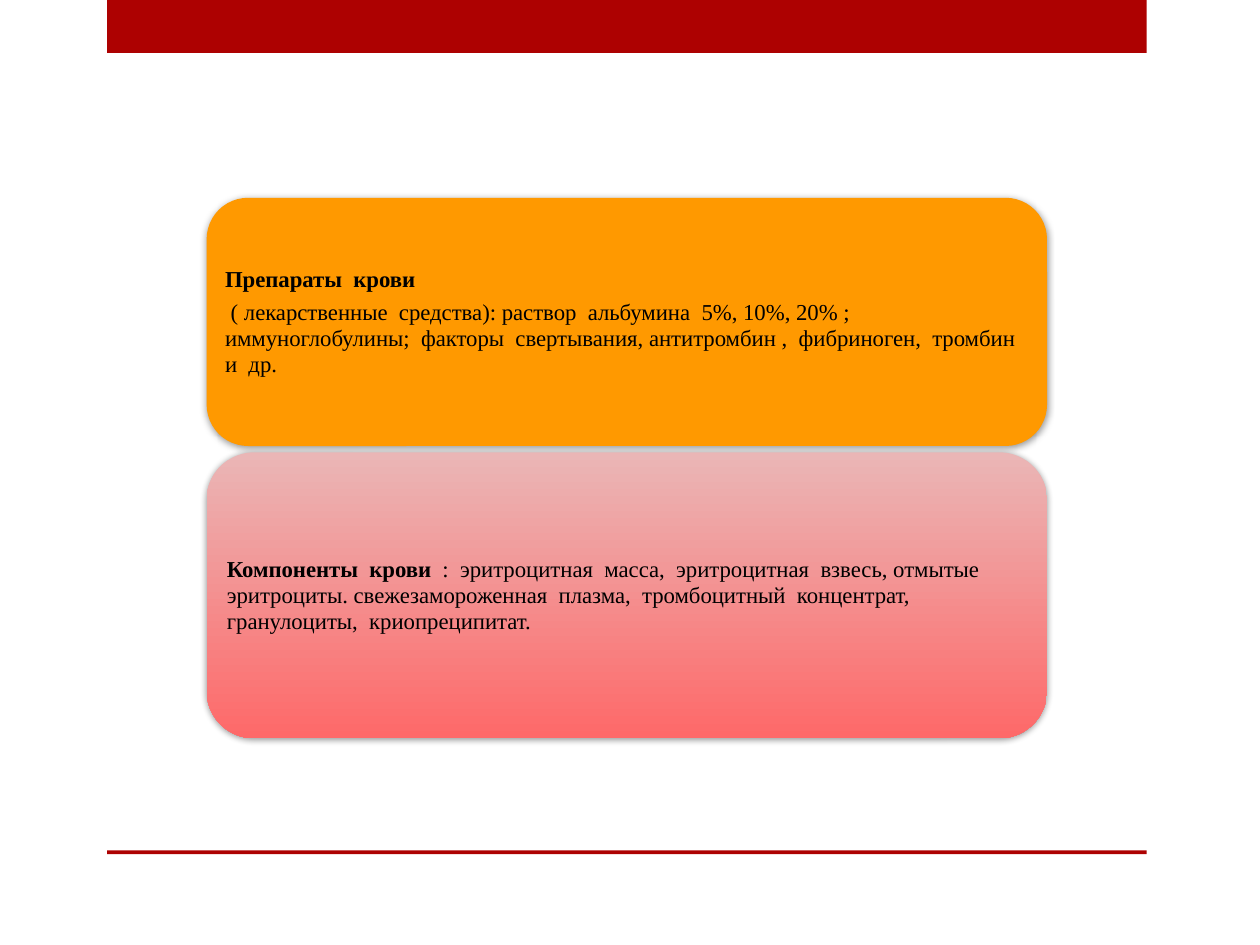
from dataclasses import dataclass

from lxml import etree
from pptx import Presentation
from pptx.dml.color import RGBColor
from pptx.enum.shapes import MSO_SHAPE
from pptx.enum.text import MSO_ANCHOR, PP_ALIGN
from pptx.oxml.ns import qn
from pptx.util import Inches, Pt

RECTANGLE = MSO_SHAPE.RECTANGLE
ROUNDED = MSO_SHAPE.ROUNDED_RECTANGLE
MIDDLE = MSO_ANCHOR.MIDDLE
LEFT = PP_ALIGN.LEFT
BLANK_LAYOUT = 6


@dataclass(frozen=True)
class Theme:
    bar: str = "AD0101"
    orange: str = "FF9900"
    pink: tuple = ("EAB6B6", "FE6969")
    ink: str = "000000"
    font: str = "Times New Roman"
    size: float = 13


THEME = Theme()

# Slide size and the columns shared by the parts, in inches
WIDTH, HEIGHT = 10, 7.5
BAR_LEFT, BAR_WIDTH = 0.85, 8.25
CARD_LEFT, CARD_WIDTH = 1.64, 6.67
CARD_TOP, CARD_GAP = 1.57, 0.05

# Each card: height, fill, paragraphs of (text, bold) spans
CARDS = [
    (1.97, THEME.orange, [
        [("Препараты  крови", True)],
        [(" ( лекарственные  средства): раствор  альбумина  5%, 10%, 20% ; "
          "иммуноглобулины;  факторы  свертывания, антитромбин ,  фибриноген,  "
          "тромбин  и  др.", False)],
    ]),
    (2.27, THEME.pink, [
        [("Компоненты  крови  ", True),
         (":  эритроцитная  масса,  эритроцитная  взвесь, отмытые  эритроциты. "
          "свежезамороженная  плазма,  тромбоцитный  концентрат,  гранулоциты,  "
          "криопреципитат.", False)],
    ]),
]


def apply_format(target, values):
    for name, value in values.items():
        setattr(target, name, value)


def paint(shape, colour):
    """Fill with one colour, or with a pair running from top to bottom."""
    if isinstance(colour, str):
        shape.fill.solid()
        shape.fill.fore_color.rgb = RGBColor.from_string(colour)
        return
    shape.fill.gradient()
    shape.fill.gradient_angle = 270
    for stop, position, value in zip(shape.fill.gradient_stops, (0, 1), colour):
        stop.position = position
        stop.color.rgb = RGBColor.from_string(value)


def add_block(page, kind, left, top, width, height, colour):
    shape = page.shapes.add_shape(kind, *map(Inches, (left, top, width, height)))
    shape.shadow.inherit = False
    shape.line.fill.background()
    paint(shape, colour)
    return shape


def add_soft_shadow(shape):
    effects = shape.element.spPr.find(qn("a:effectLst"))
    shadow = etree.SubElement(effects, qn("a:outerShdw"), blurRad=str(Pt(4)),
                              dist=str(Pt(1)), dir=str(88 * 60000), rotWithShape="0")
    colour = etree.SubElement(shadow, qn("a:srgbClr"), val=THEME.ink)
    etree.SubElement(colour, qn("a:alpha"), val="40000")


def write_text(shape, paragraphs):
    frame = shape.text_frame
    inset = Inches(0.05)
    apply_format(frame, {
        "word_wrap": True, "vertical_anchor": MIDDLE,
        "margin_left": inset, "margin_right": inset,
        "margin_top": inset, "margin_bottom": inset,
    })
    for index, spans in enumerate(paragraphs):
        para = frame.add_paragraph() if index else frame.paragraphs[0]
        apply_format(para, {"alignment": LEFT, "line_spacing": 0.95,
                            "space_after": Pt(4)})
        for text, bold in spans:
            span = para.add_run()
            span.text = text
            apply_format(span.font, {"name": THEME.font, "size": Pt(THEME.size),
                                     "bold": bold})
            span.font.color.rgb = RGBColor.from_string(THEME.ink)


def main():
    deck = Presentation()
    apply_format(deck, {"slide_width": Inches(WIDTH), "slide_height": Inches(HEIGHT)})
    page = deck.slides.add_slide(deck.slide_layouts[BLANK_LAYOUT])

    # Bars at the head and foot
    for top, height in ((0, 0.42), (0.9 * HEIGHT, 0.03)):
        add_block(page, RECTANGLE, BAR_LEFT, top, BAR_WIDTH, height, THEME.bar)

    # Stacked cards
    top = CARD_TOP
    for height, colour, paragraphs in CARDS:
        card = add_block(page, ROUNDED, CARD_LEFT, top, CARD_WIDTH, height, colour)
        add_soft_shadow(card)
        write_text(card, paragraphs)
        top += height + CARD_GAP

    deck.save("out.pptx")


if __name__ == "__main__":
    main()
